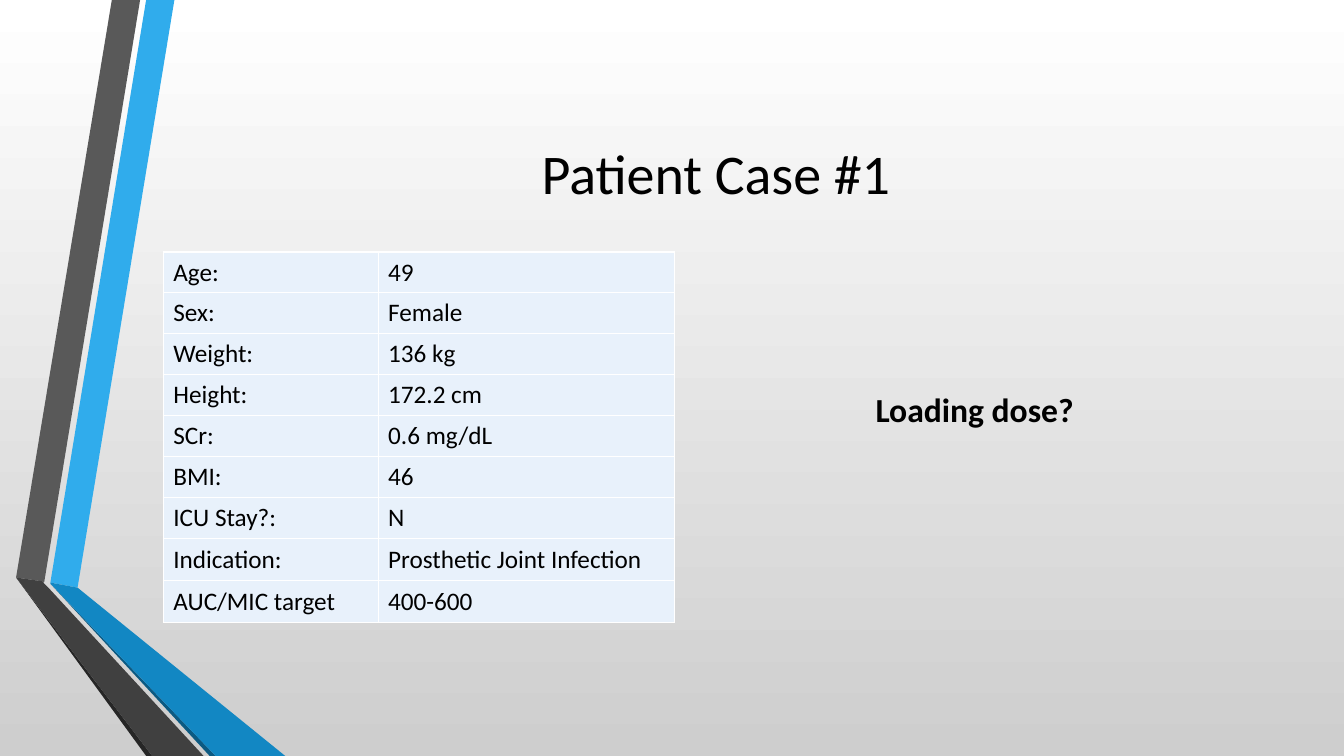
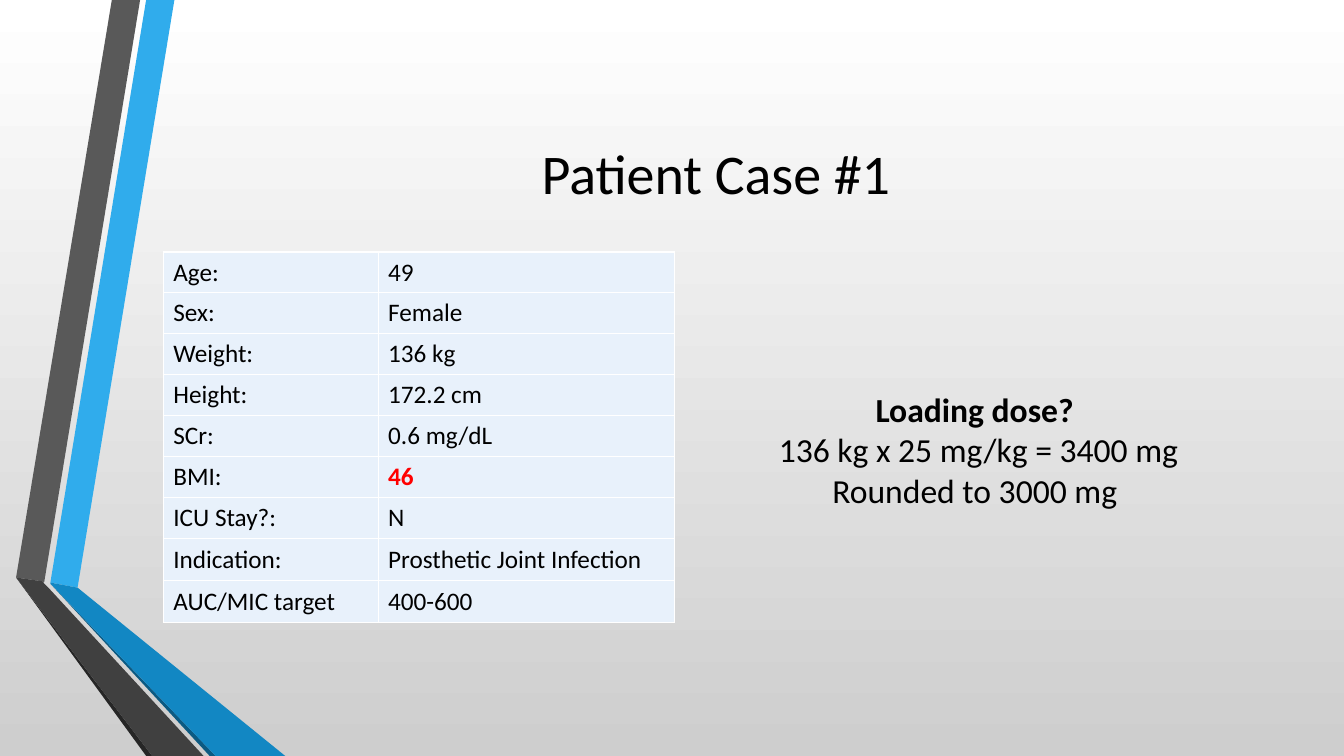
from lxml import etree
from pptx import Presentation
from pptx import util as u
from pptx.dml.color import RGBColor
from pptx.enum import text
from pptx.oxml import ns

PX = 9144
FONT = "Calibri"
BLACK = RGBColor(0x00, 0x00, 0x00)
WHITE = RGBColor(0xFF, 0xFF, 0xFF)
RED = RGBColor(0xFF, 0x00, 0x00)
SILVER = RGBColor(0xCE, 0xCE, 0xCE)
PALE_BLUE = RGBColor(0xE8, 0xF1, 0xFB)
BLUE = RGBColor(0x30, 0xAC, 0xEC)
MID_BLUE = RGBColor(0x12, 0x87, 0xC3)
DEEP_BLUE = RGBColor(0x0C, 0x5A, 0x82)
GREY = RGBColor(0x59, 0x59, 0x59)
DARK_GREY = RGBColor(0x40, 0x40, 0x40)
NEAR_BLACK = RGBColor(0x26, 0x26, 0x26)

RIBBONS = [
    (BLUE, [(50, 578), (77, 583), (173, 0), (145, 0)]),
    (GREY, [(139, 0), (111, 0), (16, 573), (44, 577)]),
    (NEAR_BLACK, [(16, 573), (145, 750), (151, 750)]),
    (DEEP_BLUE, [(50, 579), (208, 750), (214, 750)]),
    (MID_BLUE, [(50, 579), (214, 750), (283, 750), (77, 583), (50, 578)]),
    (DARK_GREY, [(202, 750), (48, 583), (43, 578), (44, 577), (16, 573), (151, 750)]),
]

PATIENT = [
    ("Age:", "49"),
    ("Sex:", "Female"),
    ("Weight:", "136 kg"),
    ("Height:", "172.2 cm"),
    ("SCr:", "0.6 mg/dL"),
    ("BMI:", "46"),
    ("ICU Stay?:", "N"),
    ("Indication:", "Prosthetic Joint Infection"),
    ("AUC/MIC target", "400-600"),
]
QUESTION = "Loading dose? "
ANSWER = ["136 kg x 25 mg/kg = 3400 mg", "Rounded to 3000 mg "]


class Deck:
    def __init__(self):
        self.prs = Presentation()
        self.prs.slide_width, self.prs.slide_height = self.emu(1333, 750)
        self.slide = None
        self.style_master()

    @staticmethod
    def emu(*lengths):
        return [u.Emu(length * PX) for length in lengths]

    def style_master(self):
        fill = self.prs.slide_master.background.fill
        fill.gradient()
        fill.gradient_angle = 270
        for stop, color in zip(fill.gradient_stops, (WHITE, SILVER)):
            stop.color.rgb = color

    def add_slide(self, title):
        first = self.slide is None
        self.slide = self.prs.slides.add_slide(self.prs.slide_layouts[5])
        if first:
            self.add_master_ribbons()
        heading = self.slide.shapes.title
        heading.left, heading.top, heading.width, heading.height = self.emu(162, 75, 1096, 192)
        heading.text_frame.vertical_anchor = text.MSO_ANCHOR.MIDDLE
        self.set_text(heading.text_frame.paragraphs[0], title, 40, centered=True)

    def add_master_ribbons(self):
        tree = self.prs.slide_master.shapes.element
        for number, (color, points) in enumerate(RIBBONS):
            builder = self.slide.shapes.build_freeform(*points[0], scale=PX)
            builder.add_line_segments(points[1:], close=True)
            ribbon = builder.convert_to_shape()
            ribbon.shadow.inherit = False
            ribbon.fill.solid()
            ribbon.fill.fore_color.rgb = color
            ribbon.line.fill.background()
            ribbon.element.xpath(".//p:cNvPr")[0].set("id", str(101 + number))
            tree.insert(2 + number, ribbon.element)

    def set_text(self, paragraph, words, size, color=BLACK, bold=False, centered=False):
        paragraph.text = words
        paragraph.font.name = FONT
        paragraph.font.size = u.Pt(size)
        paragraph.font.color.rgb = color
        paragraph.font.bold = bold
        if centered:
            paragraph.alignment = text.PP_ALIGN.CENTER

    def add_table(self, rows, highlighted=()):
        box = self.emu(162, 250, 507, 363)
        table = self.slide.shapes.add_table(len(rows), 2, *box).table
        table.first_row = table.horz_banding = False
        for column, width in zip(table.columns, self.emu(213, 294)):
            column.width = width
        for index, row in enumerate(rows):
            table.rows[index].height = self.emu(40 if index < 7 else 42)[0]
            for col, words in enumerate(row):
                cell = table.cell(index, col)
                marked = col == 1 and row[0] in highlighted
                cell.vertical_anchor = text.MSO_ANCHOR.BOTTOM
                cell.fill.solid()
                cell.fill.fore_color.rgb = PALE_BLUE
                self.set_text(cell.text_frame.paragraphs[0], words, 18,
                              RED if marked else BLACK, marked)
                self.add_borders(cell)

    def add_borders(self, cell):
        properties = cell._tc.get_or_add_tcPr()
        for position, side in enumerate(("lnL", "lnR", "lnT", "lnB")):
            line = etree.Element(ns.qn("a:" + side), w=str(u.Pt(1)))
            fill = etree.SubElement(line, ns.qn("a:solidFill"))
            etree.SubElement(fill, ns.qn("a:srgbClr"), val=str(WHITE))
            properties.insert(position, line)

    def add_dose(self, question, answer=()):
        box = self.emu(683, 381, 575, 50 + 40 * len(answer))
        frame = self.slide.shapes.add_textbox(*box).text_frame
        frame.word_wrap = True
        frame.auto_size = text.MSO_AUTO_SIZE.SHAPE_TO_FIT_TEXT
        self.set_text(frame.paragraphs[0], question, 24, bold=True, centered=True)
        for line in answer:
            self.set_text(frame.add_paragraph(), line, 24, centered=True)


def main():
    deck = Deck()
    for highlighted, answer in (((), ()), (("BMI:",), ANSWER)):
        deck.add_slide("Patient Case #1")
        deck.add_table(PATIENT, highlighted)
        deck.add_dose(QUESTION, answer)
    deck.prs.save("out.pptx")


if __name__ == "__main__":
    main()
